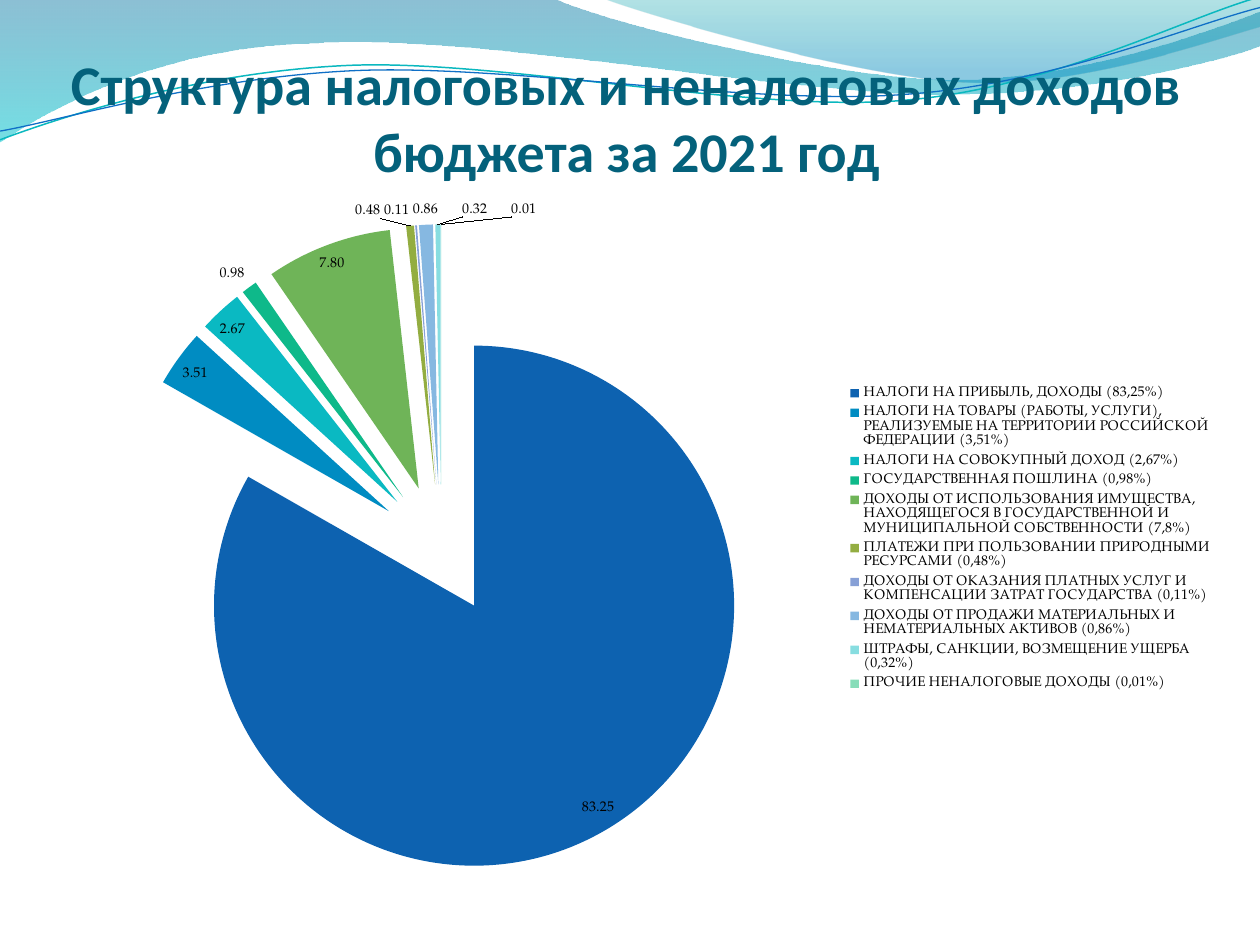
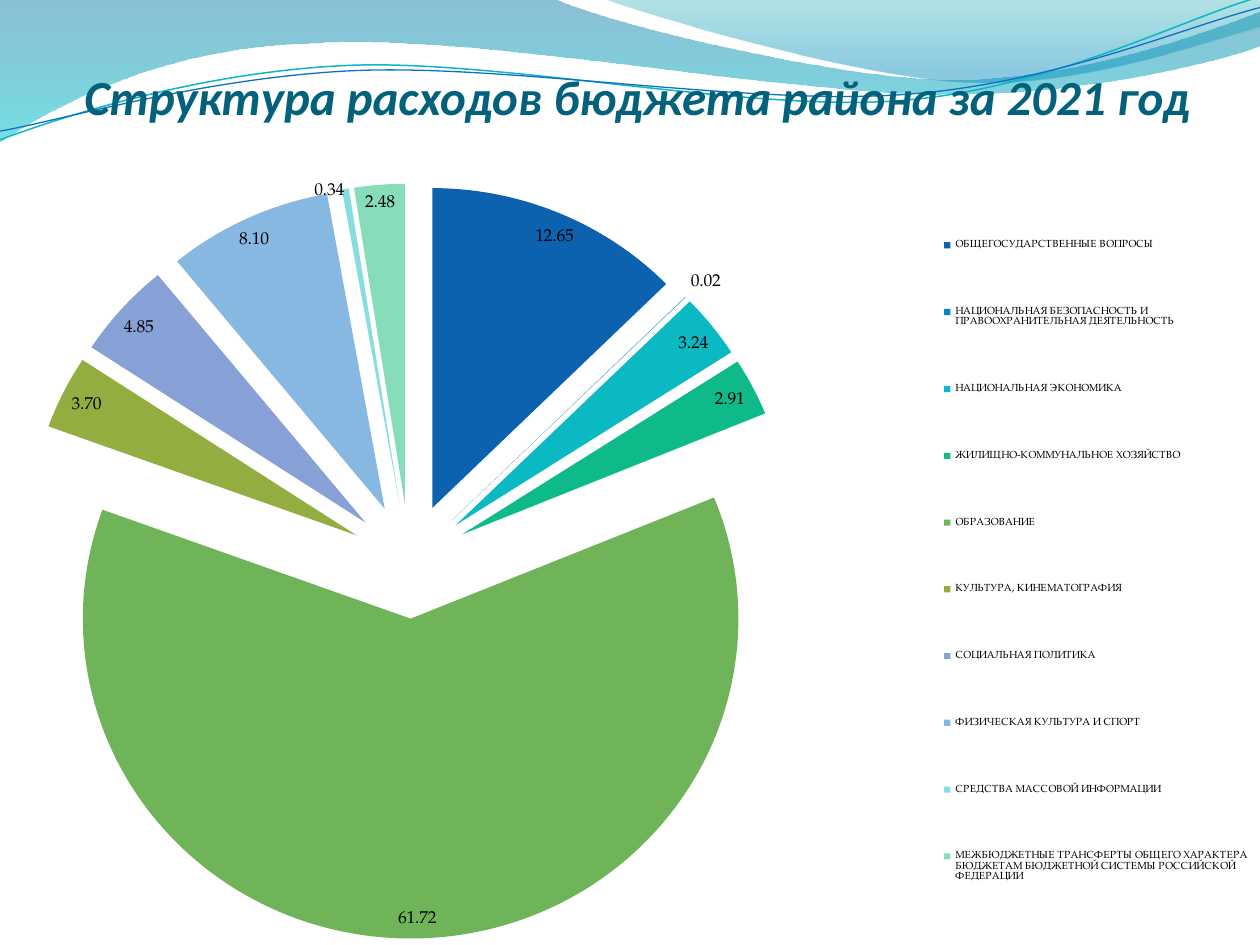
"""Builds two slides with pie charts of the 2021 budget's income and spending."""
import pptx
import pptx.chart.data
import pptx.dml.color
import pptx.enum.chart
import pptx.enum.text
import pptx.oxml
import pptx.oxml.ns
import pptx.util

Pt = pptx.util.Pt
qn = pptx.oxml.ns.qn
rgb = pptx.dml.color.RGBColor.from_string

hues = {
    "title": "04617B", "text": "000000", "teal": "0AB8BF", "blue": "0F6FC6",
    "deep": "0074A1", "aqua": "00C6CF", "sea": "00A1A9", "sky": "008BBF",
}
slices = ["0D62B0", "008CC2", "0AB9C2", "0EB98A", "6FB458",
          "93AD41", "87A0D6", "86B8E1", "87DDE0", "87DDB9"]

bands = [
    {"start": (0, 0),
     "steps": [(316.8, -0.7), (342.7, 12.2, 478.1, 45.4, 545.8, 45.4),
               (614.2, 45.4, 689.8, 18.7, 720, 6.5), (720.7, 25.9),
               (707.8, 31.7, 626.4, 54.7, 537.1, 54),
               (447.8, 54, 275, 20.2, 185, 24.5),
               (92.9, 25.9, 33.1, 59.8, -0.7, 81.4), (0, 0)],
     "stops": [(0, "deep", 45), (1, "aqua", 55)]},
    {"start": (344.9, -0.7),
     "steps": [(366.5, 7.9, 491, 44.6, 553.7, 46.8),
               (616.3, 49.7, 691.9, 23, 720, 15.1), (720, 0), (344.9, -0.7)],
     "stops": [(0, "sea", 30), (0.8, "sky", 45)]},
    {"start": (0, 79.9),
     "steps": [(34.6, 67, 113.8, 41, 199.4, 37.4),
               (284.4, 33.8, 427, 64.1, 513.4, 57.6),
               (599.8, 51.1, 675.4, 10.8, 718.6, -1.4)],
     "line": ("teal", 0.85)},
    {"start": (0, 74.9),
     "steps": [(33.8, 69.1, 118.1, 43.9, 203.8, 40.3),
               (290.2, 36.7, 429.8, 60.5, 516.2, 54),
               (601.9, 48.2, 677.5, 15.1, 720, 4.3)],
     "line": ("blue", 0.75)},
]

pages = [
    {"title": "Структура налоговых и неналоговых доходов бюджета за 2021 год",
     "box": (31, 15, 654, 90), "size": 32, "slant": False,
     "frame": (20.2, 105.8, 680.4, 403.9), "burst": 25, "label": 8, "legend": 8,
     "data": [
         ("НАЛОГИ НА ПРИБЫЛЬ, ДОХОДЫ (83,25%)", 83.25),
         ("НАЛОГИ НА ТОВАРЫ (РАБОТЫ, УСЛУГИ), РЕАЛИЗУЕМЫЕ НА ТЕРРИТОРИИ "
          "РОССИЙСКОЙ ФЕДЕРАЦИИ (3,51%)", 3.51),
         ("НАЛОГИ НА СОВОКУПНЫЙ ДОХОД (2,67%)", 2.67),
         ("ГОСУДАРСТВЕННАЯ ПОШЛИНА (0,98%)", 0.98),
         ("ДОХОДЫ ОТ ИСПОЛЬЗОВАНИЯ ИМУЩЕСТВА, НАХОДЯЩЕГОСЯ В "
          "ГОСУДАРСТВЕННОЙ И МУНИЦИПАЛЬНОЙ СОБСТВЕННОСТИ (7,8%)", 7.8),
         ("ПЛАТЕЖИ ПРИ ПОЛЬЗОВАНИИ ПРИРОДНЫМИ РЕСУРСАМИ (0,48%)", 0.48),
         ("ДОХОДЫ ОТ ОКАЗАНИЯ ПЛАТНЫХ УСЛУГ И КОМПЕНСАЦИИ ЗАТРАТ "
          "ГОСУДАРСТВА (0,11%)", 0.11),
         ("ДОХОДЫ ОТ ПРОДАЖИ МАТЕРИАЛЬНЫХ И НЕМАТЕРИАЛЬНЫХ АКТИВОВ (0,86%)",
          0.86),
         ("ШТРАФЫ, САНКЦИИ, ВОЗМЕЩЕНИЕ УЩЕРБА (0,32%)", 0.32),
         ("ПРОЧИЕ НЕНАЛОГОВЫЕ ДОХОДЫ (0,01%)", 0.01)]},
    {"title": "Структура расходов бюджета района за 2021 год",
     "box": (37, 20.5, 654, 51), "size": 28, "slant": True,
     "frame": (0, 94.3, 720, 442.1), "burst": 18, "label": 10, "legend": 6,
     "plot": (0, 0, 0.65, 1), "key": (0.74, 0, 0.26, 1),
     "data": [
         ("ОБЩЕГОСУДАРСТВЕННЫЕ ВОПРОСЫ", 12.65),
         ("НАЦИОНАЛЬНАЯ БЕЗОПАСНОСТЬ И ПРАВООХРАНИТЕЛЬНАЯ ДЕЯТЕЛЬНОСТЬ", 0.02),
         ("НАЦИОНАЛЬНАЯ ЭКОНОМИКА", 3.24),
         ("ЖИЛИЩНО-КОММУНАЛЬНОЕ ХОЗЯЙСТВО", 2.91),
         ("ОБРАЗОВАНИЕ", 61.72),
         ("КУЛЬТУРА, КИНЕМАТОГРАФИЯ", 3.7),
         ("СОЦИАЛЬНАЯ ПОЛИТИКА", 4.85),
         ("ФИЗИЧЕСКАЯ КУЛЬТУРА И СПОРТ", 8.1),
         ("СРЕДСТВА МАССОВОЙ ИНФОРМАЦИИ", 0.34),
         ("МЕЖБЮДЖЕТНЫЕ ТРАНСФЕРТЫ ОБЩЕГО ХАРАКТЕРА БЮДЖЕТАМ БЮДЖЕТНОЙ "
          "СИСТЕМЫ РОССИЙСКОЙ ФЕДЕРАЦИИ", 2.48)]},
]


def trace(shapes, start, steps):
    """Draw a freeform from lines (2 numbers) and Bézier curves (6)."""
    dots = [(Pt(step[i]), Pt(step[i + 1]))
            for step in steps for i in range(0, len(step), 2)]
    pen = shapes.build_freeform(Pt(start[0]), Pt(start[1]))
    pen.add_line_segments(dots, close=start == steps[-1])
    wave = pen.convert_to_shape()
    legs = iter(list(wave._element.iter(qn("a:lnTo"))))
    for step in steps:
        group = [next(legs) for _ in range(len(step) // 2)]
        if len(group) == 3:
            curve = group[0].makeelement(qn("a:cubicBezTo"), {})
            group[0].addprevious(curve)
            for leg in group:
                curve.append(leg[0])
                leg.getparent().remove(leg)
    return wave


def layout(node, box, inner):
    """Place the plot area or the legend by fractions of the chart."""
    spot = node.makeelement(qn("c:manualLayout"), {})
    node.append(spot)
    pairs = [("layoutTarget", "inner")] if inner else []
    pairs += [("xMode", "edge"), ("yMode", "edge")]
    pairs += [(key, str(val)) for key, val in zip("xywh", box)]
    for key, val in pairs:
        spot.append(spot.makeelement(qn("c:" + key), {"val": val}))


deck = pptx.Presentation()
deck.slide_width, deck.slide_height = Pt(720), Pt(540)

for page in pages:
    slide = deck.slides.add_slide(deck.slide_layouts[6])

    for band in bands:
        wave = trace(slide.shapes, band["start"], band["steps"])
        wave.shadow.inherit = False
        if "line" in band:
            hue, width = band["line"]
            wave.fill.background()
            wave.line.color.rgb = rgb(hues[hue])
            wave.line.width = Pt(width)
            continue
        wave.line.fill.background()
        wave.fill.gradient()
        wave.fill.gradient_angle = 270
        for stop, (place, hue, _) in zip(wave.fill.gradient_stops, band["stops"]):
            stop.position = place
            stop.color.rgb = rgb(hues[hue])
        tints = wave._element.spPr.find(qn("a:gradFill")).iter(qn("a:srgbClr"))
        for tint, (_, _, alpha) in zip(tints, band["stops"]):
            tint.append(tint.makeelement(qn("a:alpha"), {"val": str(alpha * 1000)}))

    frame = slide.shapes.add_textbox(*map(Pt, page["box"])).text_frame
    frame.word_wrap = True
    frame.vertical_anchor = pptx.enum.text.MSO_ANCHOR.BOTTOM
    frame.margin_left = frame.margin_right = frame.margin_bottom = 0
    frame.margin_top = Pt(3.6)
    head = frame.paragraphs[0]
    head.text = page["title"]
    head.alignment = pptx.enum.text.PP_ALIGN.CENTER
    head.font.name, head.font.size = "Calibri", Pt(page["size"])
    head.font.bold, head.font.italic = True, page["slant"]
    head.font.color.rgb = rgb(hues["title"])

    data = pptx.chart.data.CategoryChartData()
    data.categories = [name for name, _ in page["data"]]
    data.add_series("Series 1", [val for _, val in page["data"]])
    chart = slide.shapes.add_chart(
        pptx.enum.chart.XL_CHART_TYPE.PIE, *map(Pt, page["frame"]), data).chart
    chart.has_title = False
    chart.font.name, chart.font.size = "TeX Gyre Pagella", Pt(10)
    chart.font.color.rgb = rgb(hues["text"])

    chart.has_legend = True
    chart.legend.position = pptx.enum.chart.XL_LEGEND_POSITION.RIGHT
    chart.legend.include_in_layout = False
    chart.legend.font.size = Pt(page["legend"])

    pie = chart.plots[0]
    pie.vary_by_categories = True
    series = pie.series[0]
    for i, hue in enumerate(slices):
        fill = series.points[i].format.fill
        fill.solid()
        fill.fore_color.rgb = rgb(hue)
    point = series._element.find(qn("c:dPt"))
    point.addprevious(point.makeelement(qn("c:explosion"), {"val": str(page["burst"])}))

    labels = series.data_labels
    labels.show_value = True
    labels.number_format, labels.number_format_is_linked = "#,##0.00", False
    labels.position = pptx.enum.chart.XL_LABEL_POSITION.BEST_FIT
    labels.font.size = Pt(page["label"])

    if "plot" in page:
        area = chart._chartSpace.chart.plotArea
        key = chart.legend._element
        for old in area.findall(qn("c:layout")) + key.findall(qn("c:layout")):
            old.getparent().remove(old)
        room = area.makeelement(qn("c:layout"), {})
        area.insert(0, room)
        layout(room, page["plot"], True)
        room = key.makeelement(qn("c:layout"), {})
        key.find(qn("c:legendPos")).addnext(room)
        layout(room, page["key"], False)

deck.save("out.pptx")
